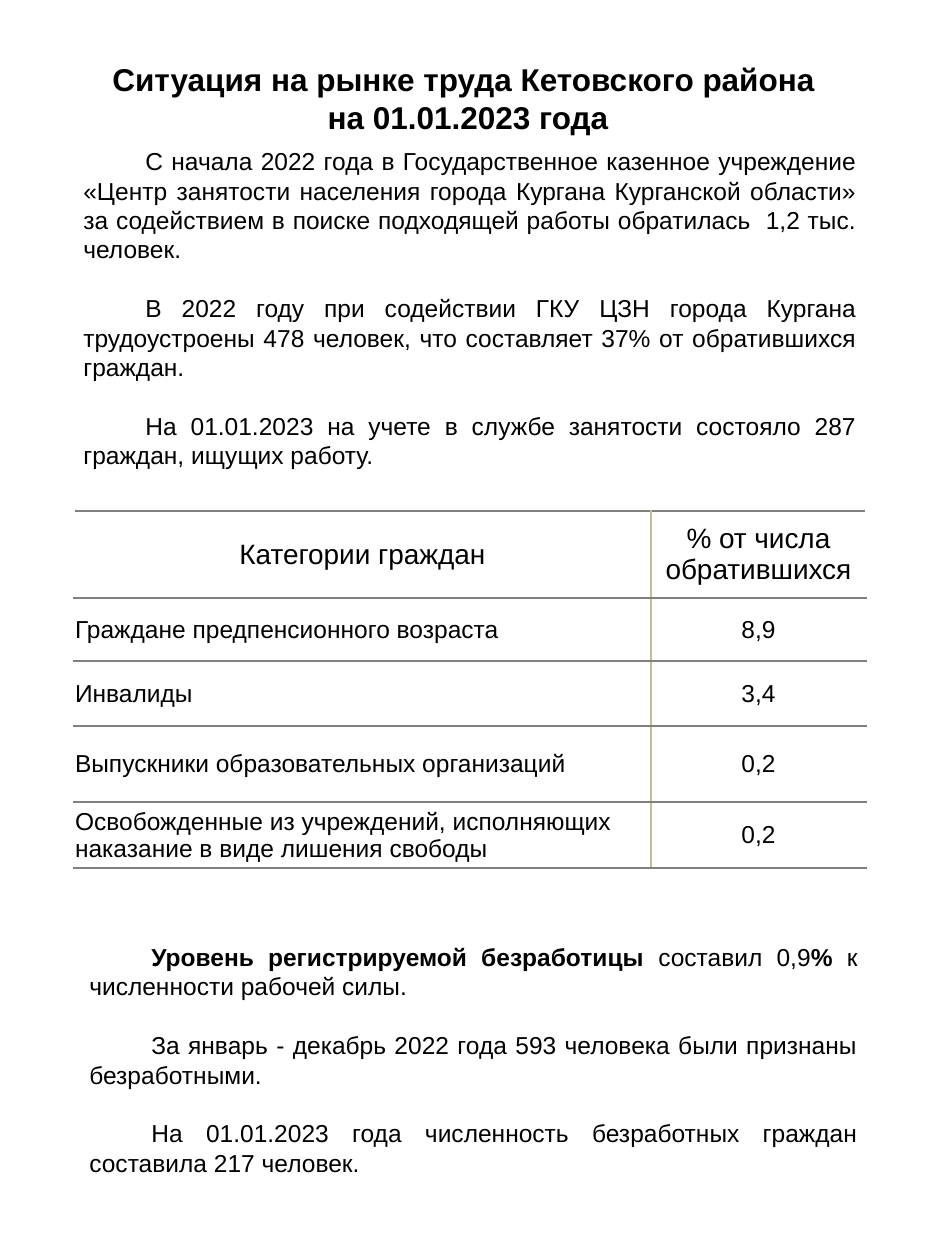
import pptx
import pptx.util
import pptx.oxml
import pptx.oxml.ns
import pptx.dml.color
import pptx.enum.text

PX = 914400 // 126
COLORS = {"text": "000000", "rule": "808080", "divider": "C4BD97"}
FONT = "Arial"
PARAGRAPH_GAP = 16.8
LINE_PX = 29
INSET = 6
ALIGN = pptx.enum.text.PP_ALIGN
MIDDLE = pptx.enum.text.MSO_ANCHOR.MIDDLE

TITLE = "Ситуация на рынке труда Кетовского района \vна 01.01.2023 года"
APPLICANTS = [
    "С начала 2022 года в Государственное казенное учреждение «Центр занятости "
    "населения города Кургана Курганской области» за содействием в поиске "
    "подходящей работы обратилась  1,2 тыс. человек.",
    "В 2022 году при содействии ГКУ ЦЗН города Кургана трудоустроены 478 человек, "
    "что составляет 37% от обратившихся граждан.",
    "На 01.01.2023 на учете в службе занятости состояло 287 граждан, ищущих работу.",
]
UNEMPLOYMENT = [
    [("Уровень регистрируемой безработицы", True), (" составил 0,9", False),
     ("% ", True), ("к численности рабочей силы.", False)],
    "За январь - декабрь 2022 года 593 человека были признаны безработными.",
    "На 01.01.2023 года численность безработных граждан составила 217 человек.",
]
CATEGORIES = [
    ("Категории граждан", "% от числа обратившихся"),
    ("Граждане предпенсионного возраста", "8,9"),
    ("Инвалиды", "3,4"),
    ("Выпускники образовательных организаций", "0,2"),
    ("Освобожденные из учреждений, исполняющих наказание в виде лишения свободы", "0,2"),
]
COLUMN_WIDTHS = [577, 215]
ROW_HEIGHTS = [87, 63, 65, 76, 66]


def px(*lengths):
    return [pptx.util.Emu(length * PX) for length in lengths]


def write(paragraph, text, size=14, bold=False, align=ALIGN.LEFT):
    """Fill a paragraph from a string or from a list of (text, bold) pieces."""
    paragraph.alignment = align
    pieces = [(text, bold)] if isinstance(text, str) else text
    for words, is_bold in pieces:
        for number, line in enumerate(words.split("\v")):
            if number:
                paragraph.add_line_break()
            run = paragraph.add_run()
            run.text = line
            run.font.name = FONT
            run.font.size = pptx.util.Pt(size)
            run.font.bold = is_bold
            run.font.color.rgb = pptx.dml.color.RGBColor.from_string(COLORS["text"])


def add_text(slide, box, paragraphs, indent=0, bottom=INSET, **style):
    frame = slide.shapes.add_textbox(*px(*box)).text_frame
    frame.word_wrap = True
    frame.auto_size = pptx.enum.text.MSO_AUTO_SIZE.SHAPE_TO_FIT_TEXT
    frame.vertical_anchor = MIDDLE
    frame.margin_bottom = px(bottom)[0]
    for number, text in enumerate(paragraphs):
        paragraph = frame.add_paragraph() if number else frame.paragraphs[0]
        write(paragraph, text, **style)
        if number:
            paragraph.space_before = pptx.util.Pt(PARAGRAPH_GAP)
        if indent:
            properties = paragraph._p.get_or_add_pPr()
            properties.set("marL", "0")
            properties.set("indent", str(indent * PX))


def add_border(cell, side, color, points):
    cell._tc.get_or_add_tcPr().append(pptx.oxml.parse_xml(
        f'<a:ln{side} {pptx.oxml.ns.nsdecls("a")} w="{pptx.util.Pt(points)}">'
        f'<a:solidFill><a:srgbClr val="{color}"/></a:solidFill></a:ln{side}>'))


def add_category_table(slide, left, top):
    table = slide.shapes.add_table(
        len(ROW_HEIGHTS), len(COLUMN_WIDTHS),
        *px(left, top, sum(COLUMN_WIDTHS), sum(ROW_HEIGHTS))).table
    table.first_row = table.horz_banding = False
    for column, width in zip(table.columns, px(*COLUMN_WIDTHS)):
        column.width = width
    for row, height in zip(table.rows, px(*ROW_HEIGHTS)):
        row.height = height
    for r, labels in enumerate(CATEGORIES):
        for c, label in enumerate(labels):
            cell = table.cell(r, c)
            cell.vertical_anchor = MIDDLE
            if r:
                cell.margin_left = cell.margin_right = cell.margin_top = px(1)[0]
                cell.margin_bottom = 0
            write(cell.text_frame.paragraphs[0], label, size=14 if r else 16,
                  align=ALIGN.LEFT if r and not c else ALIGN.CENTER)
            add_border(cell, "L" if c else "R", COLORS["divider"], 1)
            for side in "TB":
                add_border(cell, side, COLORS["rule"], 1.5)
            cell.fill.background()


def main():
    deck = pptx.Presentation()
    deck.slide_width, deck.slide_height = px(945, 1260)
    slide = deck.slides.add_slide(deck.slide_layouts[6])
    add_text(slide, (66, 53, 804, 89), [TITLE], size=18, bold=True, align=ALIGN.CENTER)
    add_text(slide, (71, 138, 798, 369), APPLICANTS, indent=62,
             bottom=INSET + LINE_PX, align=ALIGN.JUSTIFY)
    add_text(slide, (77, 934, 793, 251), UNEMPLOYMENT, indent=62, align=ALIGN.JUSTIFY)
    add_category_table(slide, 74, 511)
    deck.save("out.pptx")


if __name__ == "__main__":
    main()
